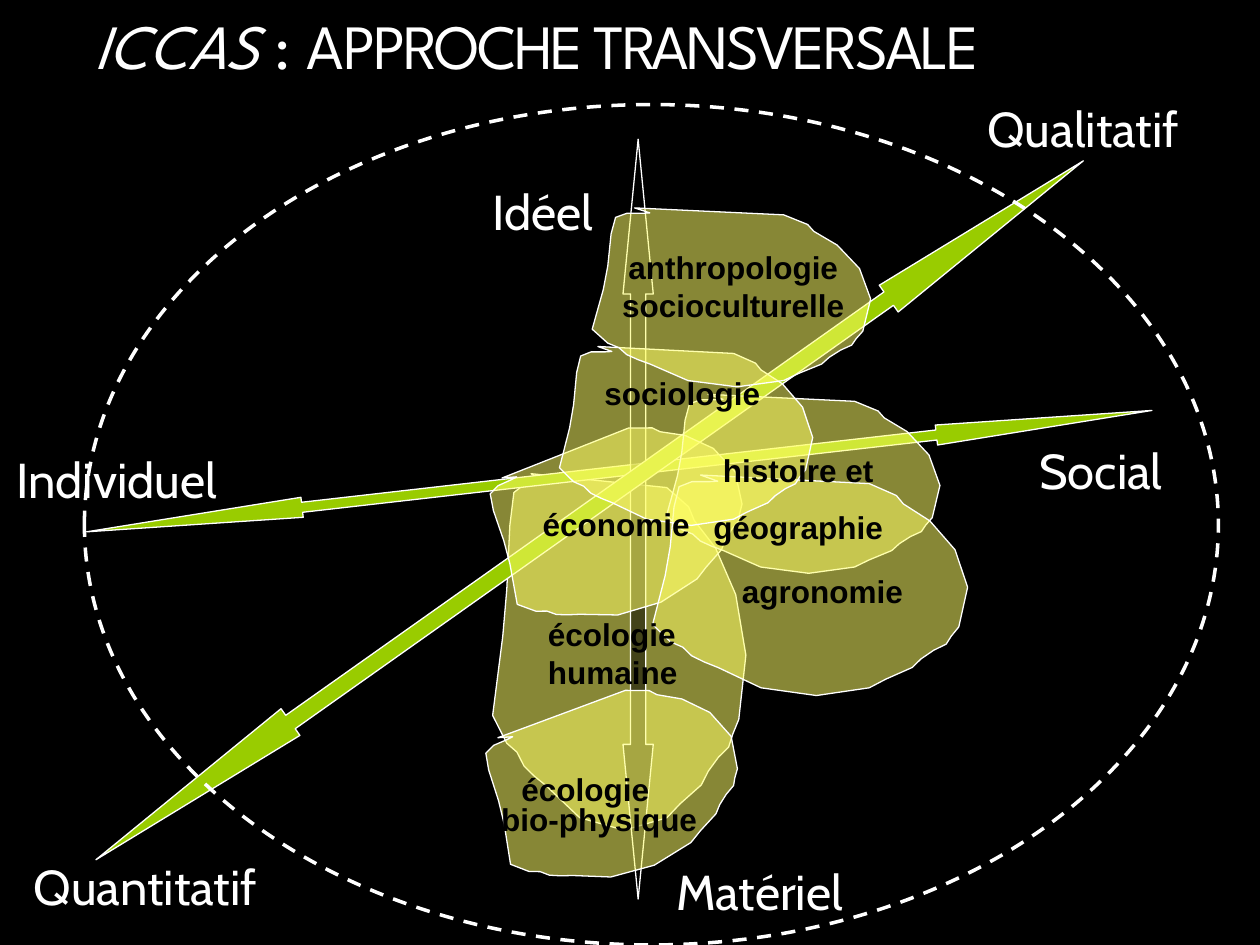
from lxml.etree import SubElement
from pptx import Presentation
from pptx.dml.color import RGBColor
from pptx.enum.dml import MSO_LINE
from pptx.enum.shapes import MSO_SHAPE
from pptx.enum.text import MSO_ANCHOR, MSO_AUTO_SIZE, PP_ALIGN
from pptx.oxml.ns import qn
from pptx.util import Inches, Pt

BLACK = RGBColor(0x00, 0x00, 0x00)
WHITE = RGBColor(0xFF, 0xFF, 0xFF)
GREEN = RGBColor(0x99, 0xCC, 0x00)
YELLOW = RGBColor(0xFF, 0xFF, 0x66)

OUTLINE = [
    (15.2, 0), (68.8, 3.9), (77.4, 9.3), (79.6, 13.1), (88, 20.8), (96, 33.9),
    (100, 50.9), (97.2, 68.9), (94.8, 73.1), (93.2, 76.7), (89.2, 79.5),
    (85.2, 83.4), (82.4, 87.3), (74, 92.6), (68.8, 96.5), (52, 100),
    (34.4, 96.5), (20.8, 87.3), (16.4, 84.8), (12.4, 82), (9.6, 78.1),
    (5.6, 75.6), (0, 67.8), (4, 45.6), (5.6, 32.5), (6.8, 14.5), (8.4, 5.3),
    (12.5, 3), (18.2, 3), (20.7, 2.8),
]

HUMAN_ECOLOGY = (3.91, 3.76, 2.01, 2.83, 0)
OTHER_FIELDS = [
    (3.91, 3.44, 2.01, 1.42, 335.5),
    (5.29, 3.13, 2.17, 1.42, 0),
    (5.18, 3.77, 2.5, 1.75, 0),
    (4.44, 2.75, 2.01, 1.42, 0),
    (4.7, 1.65, 2.21, 1.42, 0),
    (3.87, 5.52, 2.01, 1.42, 336.7),
]

AXES = [
    (0.66, 3.66, 8.51, 0.16, 353.5, 10.77, GREEN, 100),
    (2.05, 4, 6.03, 0.24, 270, 5.11, BLACK, 50),
    (-0.12, 3.92, 9.6, 0.26, 324.7, 7.28, GREEN, 100),
]

AXIS_LABELS = [
    ("Social", 8.15, 3.45, 1.85),
    ("Idéel", 3.81, 1.39, 1.69),
    ("Qualitatif", 7.74, 0.73, 2.19),
    ("Quantitatif", 0.17, 6.75, 2.5),
    ("Matériel", 5.27, 6.79, 2.11),
    ("Individuel", 0.03, 3.52, 2),
]

FIELD_LABELS = [
    (["agronomie"], 5.79, 4.49, 1.49, 0.4, {"wrap": False}),
    (["sociologie"], 4.42, 2.92, 1.99, 0.4, {"align": PP_ALIGN.CENTER}),
    (["écologie"], 4.04, 6.06, 1.23, 0.4, {"wrap": False}),
    (["bio-physique"], 3.88, 6.3, 1.77, 0.4, {"wrap": False}),
    (["histoire et géographie"], 5.42, 3.38, 1.83, 0.95,
     {"align": PP_ALIGN.CENTER, "line_spacing": 1.5}),
    (["économie"], 4.2, 3.96, 1.38, 0.4, {"align": PP_ALIGN.CENTER, "wrap": False}),
    (["écologie", "humaine"], 4.25, 4.83, 1.25, 0.71, {"wrap": False}),
    (["anthropologie socioculturelle"], 4.82, 1.92, 2, 0.71, {"align": PP_ALIGN.CENTER}),
]


def add_span(para, text, font="Arial", size=18, color=BLACK, bold=False,
             italic=False, spacing=0):
    span = para.add_run()
    span.text = text
    span.font.name = font
    span.font.size = Pt(size)
    span.font.color.rgb = color
    span.font.bold = bold
    span.font.italic = italic
    if spacing:
        span.font._element.set("spc", str(int(spacing * 100)))


class SlideBuilder:
    def __init__(self, slide):
        self.slide = slide
        slide.background.fill.solid()
        slide.background.fill.fore_color.rgb = BLACK

    def paint(self, shape, color, opacity=100):
        shape.shadow.inherit = False
        shape.fill.solid()
        shape.fill.fore_color.rgb = color
        if opacity < 100:
            tint = shape._element.spPr.find(qn("a:solidFill"))[0]
            SubElement(tint, qn("a:alpha")).set("val", str(opacity * 1000))
        shape.line.color.rgb = WHITE
        shape.line.width = Pt(0.75)

    def title(self, spans):
        box = self.slide.shapes.title
        box.left, box.top = Inches(0), Inches(0)
        box.width, box.height = Inches(10), Inches(2)
        frame = box.text_frame
        frame.vertical_anchor = MSO_ANCHOR.TOP
        frame.auto_size = MSO_AUTO_SIZE.NONE
        frame.margin_left = Inches(0.75)
        para = frame.paragraphs[0]
        para.alignment = PP_ALIGN.JUSTIFY
        for text, style in spans:
            add_span(para, text, font="League Spartan", size=36, color=WHITE, **style)

    def field(self, left, top, width, height, rotation):
        points = [(Inches(left + width * x / 100), Inches(top + height * y / 100))
                  for x, y in OUTLINE]
        builder = self.slide.shapes.build_freeform(*points[0])
        builder.add_line_segments(points[1:], close=True)
        shape = builder.convert_to_shape()
        shape.rotation = rotation
        self.paint(shape, YELLOW, 53)

    def axis(self, left, top, width, height, rotation, head, color, opacity):
        arrow = self.slide.shapes.add_shape(
            MSO_SHAPE.LEFT_RIGHT_ARROW,
            Inches(left), Inches(top), Inches(width), Inches(height))
        arrow.rotation = rotation
        arrow.adjustments[0] = 0.5
        arrow.adjustments[1] = head
        self.paint(arrow, color, opacity)

    def dashed_ellipse(self, left, top, width, height):
        ellipse = self.slide.shapes.add_shape(
            MSO_SHAPE.OVAL, Inches(left), Inches(top), Inches(width), Inches(height))
        ellipse.shadow.inherit = False
        ellipse.fill.background()
        ellipse.line.color.rgb = WHITE
        ellipse.line.width = Pt(2)
        ellipse.line.dash_style = MSO_LINE.DASH

    def label(self, lines, left, top, width, height, align=PP_ALIGN.LEFT,
              wrap=True, line_spacing=None, **style):
        box = self.slide.shapes.add_textbox(
            Inches(left), Inches(top), Inches(width), Inches(height))
        frame = box.text_frame
        frame.word_wrap = wrap
        frame.auto_size = MSO_AUTO_SIZE.SHAPE_TO_FIT_TEXT
        for index, line in enumerate(lines):
            para = frame.add_paragraph() if index else frame.paragraphs[0]
            para.alignment = align
            para.line_spacing = line_spacing
            add_span(para, line, **style)


def main():
    deck = Presentation()
    deck.slide_width, deck.slide_height = Inches(10), Inches(7.5)
    page = SlideBuilder(deck.slides.add_slide(deck.slide_layouts[5]))
    page.title([
        ("ICCAS ", {"italic": True}),
        (": A", {}),
        ("PPROCHE TRANSVERSALE", {"spacing": -1.5}),
    ])
    page.field(*HUMAN_ECOLOGY)
    for axis in AXES:
        page.axis(*axis)
    for field in OTHER_FIELDS:
        page.field(*field)
    page.dashed_ellipse(0.67, 0.83, 9, 6.67)
    for text, left, top, width in AXIS_LABELS:
        page.label([text], left, top, width, 0.57, font="Cabin", size=28, color=WHITE)
    for lines, left, top, width, height, layout in FIELD_LABELS:
        page.label(lines, left, top, width, height, bold=True, **layout)
    deck.save("out.pptx")


if __name__ == "__main__":
    main()
